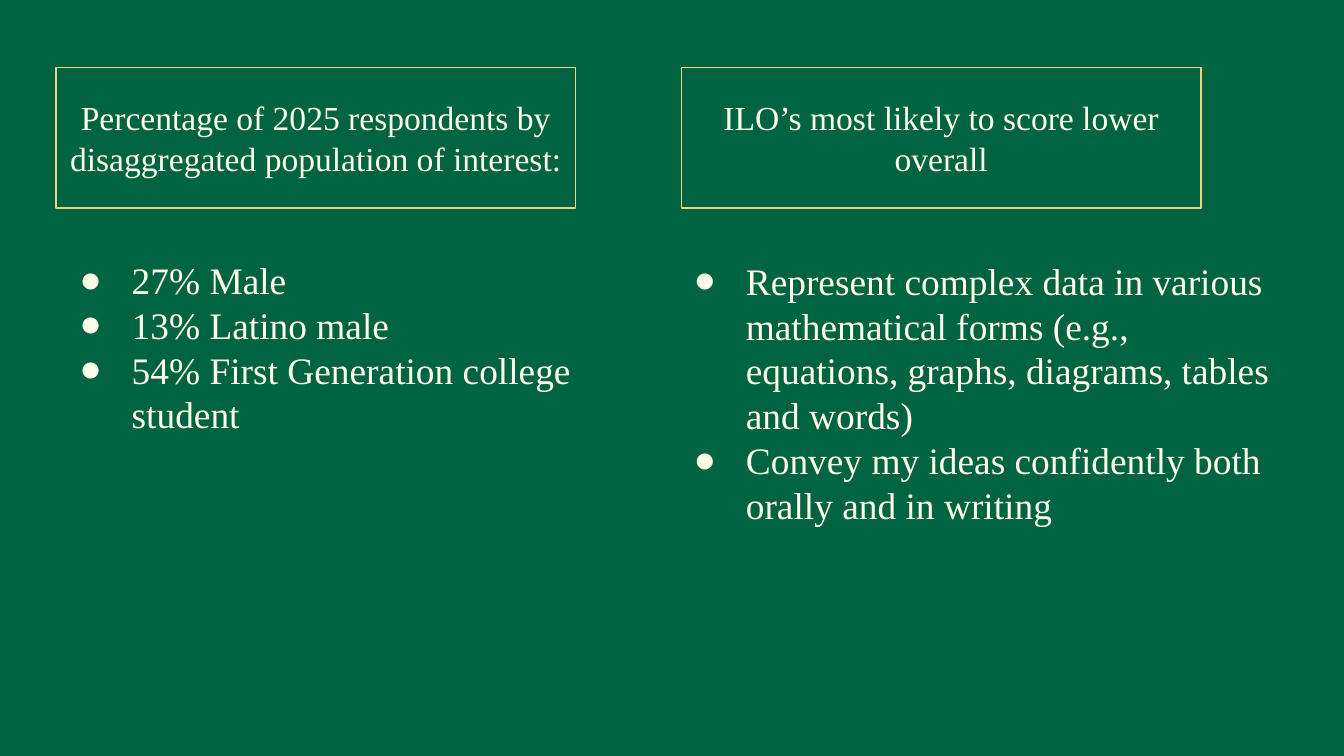
from pptx import Presentation
from pptx.dml.color import RGBColor as RGB
from pptx.enum.shapes import MSO_SHAPE as SHAPE
from pptx.enum.text import MSO_ANCHOR as ANCHOR, MSO_AUTO_SIZE as FIT, PP_ALIGN as ALIGN
from pptx.oxml.ns import qn
from pptx.util import Pt
from lxml.etree import SubElement

PX = 6350  # 144 px to the inch
HUES = {"green": "006342", "cream": "FFFCE9", "gold": "F1D47D"}
FONT = "Times New Roman"


def hue(name):
    return RGB.from_string(HUES[name])


def write(frame, lines, size, align, anchor):
    frame.word_wrap = True
    frame.auto_size = FIT.NONE
    frame.vertical_anchor = anchor
    frame.margin_left = frame.margin_right = Pt(7.2)
    frame.margin_top = frame.margin_bottom = Pt(7.2)
    for i, line in enumerate(lines):
        para = frame.paragraphs[0] if i == 0 else frame.add_paragraph()
        para.alignment = align
        para.line_spacing = 1.0
        para.space_before = para.space_after = Pt(0)
        run = para.add_run()
        run.text = line
        run.font.name = FONT
        run.font.size = Pt(size)
        run.font.color.rgb = hue("cream")


# Slide and background
prs = Presentation()
prs.slide_width, prs.slide_height = 1440 * PX, 810 * PX
slide = prs.slides.add_slide(prs.slide_layouts[5])
slide.background.fill.solid()
slide.background.fill.fore_color.rgb = hue("green")

# Columns: heading left, list left, list top, heading, items
cols = [
    (60, 55, 261, "Percentage of 2025 respondents by disaggregated population of interest:",
     ["27% Male", "13% Latino male", "54% First Generation college student"]),
    (730, 713, 262, "ILO’s most likely to score lower overall",
     ["Represent complex data in various mathematical forms "
      "(e.g., equations, graphs, diagrams, tables and words)",
      "Convey my ideas confidently both orally and in writing"]),
]

for i, (left, x, y, head, items) in enumerate(cols):
    # Framed heading: the first is the slide title
    if i == 0:
        box = slide.shapes.title
    else:
        box = slide.shapes.add_shape(SHAPE.RECTANGLE, 0, 0, PX, PX)
        box.shadow.inherit = False
    box.left, box.top, box.width, box.height = left * PX, 72 * PX, 557 * PX, 151 * PX
    box.fill.background()
    box.line.color.rgb = hue("gold")
    box.line.width = Pt(0.75)
    write(box.text_frame, [head], 18, ALIGN.CENTER, ANCHOR.MIDDLE)

    # Bulleted list
    body = slide.shapes.add_textbox(x * PX, y * PX, 675 * PX, 495 * PX)
    write(body.text_frame, items, 20, ALIGN.LEFT, ANCHOR.TOP)
    for para in body.text_frame.paragraphs:
        props = para._p.get_or_add_pPr()
        props.set("marL", str(72 * PX))
        props.set("indent", str(-56 * PX))
        tint = SubElement(props, qn("a:buClr"))
        SubElement(tint, qn("a:srgbClr")).set("val", HUES["cream"])
        SubElement(props, qn("a:buFont")).set("typeface", FONT)
        SubElement(props, qn("a:buChar")).set("char", "●")

prs.save("out.pptx")
